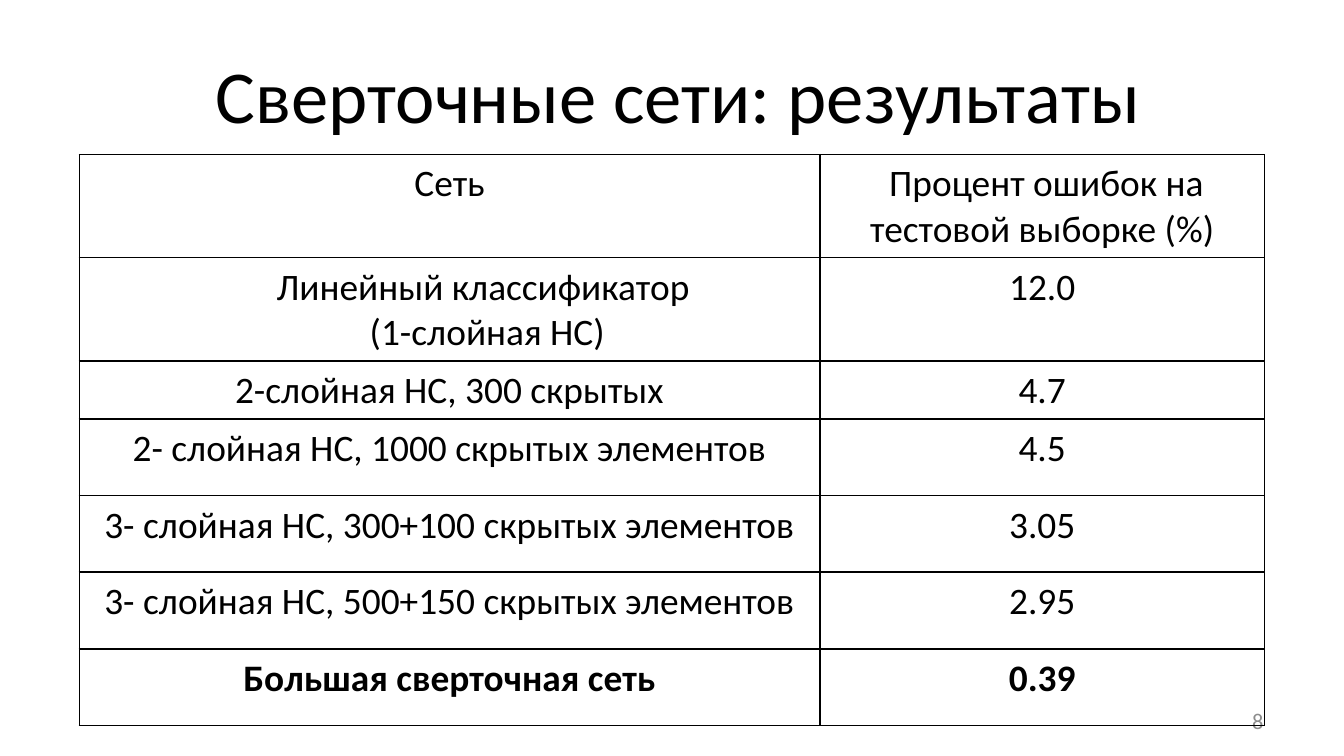
from lxml import etree
from pptx import Presentation
from pptx.dml.color import RGBColor
from pptx.enum.text import MSO_ANCHOR, PP_ALIGN
from pptx.oxml.ns import qn
from pptx.util import Inches, Pt

MIDDLE = MSO_ANCHOR.MIDDLE
CENTER, RIGHT = PP_ALIGN.CENTER, PP_ALIGN.RIGHT
FONT = "Calibri"
COLORS = {"text": "000000", "number": "8C8C8C", "border": "000000"}
WIDTH = 10
HEIGHT = WIDTH * 9 / 16
COL_WIDTHS = [5.51, 3.31]
ROW_HEIGHTS = [0.57, 0.57, 0.34] + [0.57] * 4
TABLE_HEIGHT = 4.26
HANGING, INDENTED = (0.38, -0.38), (0.38, 0.12)
ROWS = [
    ("Сеть", " Процент ошибок на тестовой выборке (%)"),
    ("Линейный классификатор\n (1-слойная НС)", "12.0"),
    ("2-слойная НС, 300 скрытых", "4.7"),
    ("2- слойная НС, 1000 скрытых элементов", "4.5"),
    ("3- слойная НС, 300+100 скрытых элементов", "3.05"),
    ("3- слойная НС, 500+150 скрытых элементов", "2.95"),
    ("Большая сверточная сеть", "0.39"),
]
INDENTS = {(0, 1): (0, 0), (1, 0): INDENTED}


def style_paragraph(p, size, color, align, bold=False):
    """Set the alignment and font of a paragraph."""
    p.alignment = align
    p.font.name = FONT
    p.font.size = Pt(size)
    p.font.bold = bold
    p.font.color.rgb = RGBColor.from_string(COLORS[color])


def add_text(s, text, box, size, color, align):
    """Add a vertically centred text box."""
    tf = s.shapes.add_textbox(*map(Inches, box)).text_frame
    tf.word_wrap = True
    tf.vertical_anchor = MIDDLE
    tf.text = text
    style_paragraph(tf.paragraphs[0], size, color, align)


def add_borders(cell, width=1):
    """Draw a solid line on all four sides of a cell."""
    tc_pr = cell._tc.get_or_add_tcPr()
    for i, side in enumerate("LRTB"):
        ln = etree.Element(qn(f"a:ln{side}"), w=str(Pt(width)))
        fill = etree.SubElement(ln, qn("a:solidFill"))
        etree.SubElement(fill, qn("a:srgbClr"), val=COLORS["border"])
        tc_pr.insert(i, ln)


def fill_cell(cell, text, indent, bold):
    """Write centred, indented text into an unfilled, bordered cell."""
    cell.text = text
    cell.fill.background()
    add_borders(cell)
    margin, first_line = indent
    for p in cell.text_frame.paragraphs:
        p_pr = p._p.get_or_add_pPr()
        p_pr.set("marL", str(Inches(margin)))
        p_pr.set("indent", str(Inches(first_line)))
        style_paragraph(p, 20, "text", CENTER, bold)


def add_results_table(s, left, top):
    """Add the table of test errors, with its last row in bold."""
    box = left, top, sum(COL_WIDTHS), TABLE_HEIGHT
    frame = s.shapes.add_table(len(ROWS), len(COL_WIDTHS), *map(Inches, box))
    table = frame.table
    table.first_row = table.horz_banding = False
    for column, width in zip(table.columns, COL_WIDTHS):
        column.width = Inches(width)
    for r, (row, height) in enumerate(zip(ROWS, ROW_HEIGHTS)):
        table.rows[r].height = Inches(height)
        for c, text in enumerate(row):
            indent = INDENTS.get((r, c), HANGING)
            fill_cell(table.cell(r, c), text, indent, r == len(ROWS) - 1)
    frame.height = Inches(TABLE_HEIGHT)


def main():
    """Build the slide of convolutional network results."""
    prs = Presentation()
    prs.slide_width, prs.slide_height = Inches(WIDTH), Inches(HEIGHT)
    s = prs.slides.add_slide(prs.slide_layouts[6])
    add_text(s, "Сверточные сети: результаты", (0.28, 0.23, 9.53, 0.94), 40, "text", CENTER)
    add_text(s, "8", (7.17, 5.21, 2.33, 0.3), 12, "number", RIGHT)
    add_results_table(s, (WIDTH - sum(COL_WIDTHS)) / 2, 1.15)
    prs.save("out.pptx")


if __name__ == "__main__":
    main()
